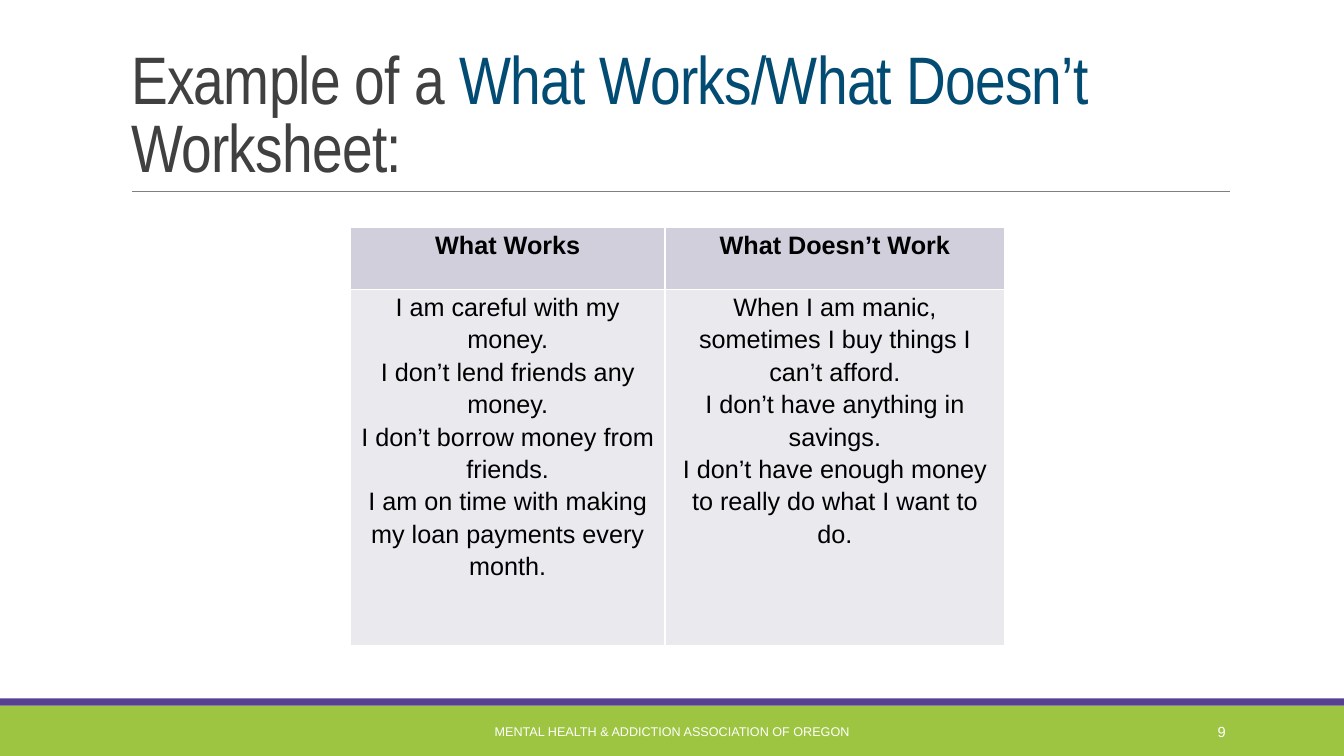
from lxml import etree
from pptx import Presentation
from pptx.dml.color import RGBColor
from pptx.enum import shapes, text
from pptx.oxml import ns
from pptx.util import Cm, Pt

GREEN = RGBColor(0x9D, 0xC5, 0x41)
PURPLE = RGBColor(0x56, 0x41, 0x91)
GRAY = RGBColor(0x80, 0x80, 0x80)
CHARCOAL = RGBColor(0x40, 0x40, 0x40)
NAVY = RGBColor(0x02, 0x4B, 0x73)
HEADER_FILL = RGBColor(0xD1, 0xCF, 0xDC)
BODY_FILL = RGBColor(0xE9, 0xE9, 0xEE)
BLACK = RGBColor(0, 0, 0)
WHITE = RGBColor(255, 255, 255)

TITLE = [("Example of a ", CHARCOAL),
         ("What Works/What Doesn’t", NAVY),
         (" Worksheet:", CHARCOAL)]
WORKSHEET = {
    "What Works": [
        "I am careful with my money.",
        "I don’t lend friends any money.",
        "I don’t borrow money from friends.",
        "I am on time with making my loan payments every month.",
    ],
    "What Doesn’t Work": [
        "When I am manic, sometimes I buy things I can’t afford.",
        "I don’t have anything in savings.",
        "I don’t have enough money to really do what I want to do.",
    ],
}
COLUMN_WIDTHS = [Cm(7.93), Cm(8.56)]
ROW_HEIGHTS = [Cm(1.55), Cm(8.98)]
FOOTER = "MENTAL HEALTH & ADDICTION ASSOCIATION OF OREGON"
PAGE_NUMBER = "9"

CENTER = text.PP_ALIGN.CENTER


def write(frame, paragraphs, font="Arial", size=18, bold=False,
          align=CENTER, spacing=1.0, tracking=None):
    """Fill a text frame; each paragraph is a list of (words, colour) spans."""
    for index, spans in enumerate(paragraphs):
        para = frame.paragraphs[0] if index == 0 else frame.add_paragraph()
        para.alignment = align
        para.line_spacing = spacing
        para.space_before = para.space_after = Pt(0)
        for words, color in spans:
            span = para.add_run()
            span.text = words
            span.font.name = font
            span.font.size = Pt(size)
            span.font.bold = bold
            span.font.color.rgb = color
            if tracking is not None:
                span.font._element.set("spc", str(tracking))


def add_band(page, top, height, color):
    band = page.shapes.add_shape(shapes.MSO_SHAPE.RECTANGLE,
                                 0, top, deck.slide_width, height)
    band.shadow.inherit = False
    band.fill.solid()
    band.fill.fore_color.rgb = color
    band.line.fill.background()


def add_label(page, left, width, words, **style):
    box = page.shapes.add_textbox(left, Cm(17.93), width, Cm(1.02))
    box.text_frame.word_wrap = True
    box.text_frame.vertical_anchor = text.MSO_ANCHOR.MIDDLE
    write(box.text_frame, [[(words, WHITE)]], **style)


def add_borders(cell):
    properties = cell._tc.get_or_add_tcPr()
    for side in ("lnL", "lnR", "lnT", "lnB"):
        line = etree.SubElement(properties, ns.qn(f"a:{side}"), w=str(Pt(1)))
        fill = etree.SubElement(line, ns.qn("a:solidFill"))
        etree.SubElement(fill, ns.qn("a:srgbClr"), val=str(WHITE))


def fill_cell(cell, lines, color, bold):
    add_borders(cell)
    cell.fill.solid()
    cell.fill.fore_color.rgb = color
    cell.margin_left = cell.margin_right = Cm(0.18)
    cell.margin_top = cell.margin_bottom = 0
    write(cell.text_frame, [[(line, BLACK)] for line in lines],
          bold=bold, spacing=1.15)


deck = Presentation()
deck.slide_width, deck.slide_height = Cm(33.87), Cm(19.05)
page = deck.slides.add_slide(deck.slide_layouts[5])

add_band(page, Cm(17.78), Cm(1.27), GREEN)
add_band(page, Cm(17.6), Cm(0.18), PURPLE)

rule = page.shapes.add_connector(shapes.MSO_CONNECTOR.STRAIGHT,
                                 Cm(3.33), Cm(4.82), Cm(31), Cm(4.82))
rule.line.color.rgb = GRAY
rule.line.width = Pt(0.5)
etree.SubElement(rule._element.spPr, ns.qn("a:effectLst"))

title = page.shapes.title
title.left, title.top, title.width, title.height = (
    Cm(3.05), Cm(0.79), Cm(27.94), Cm(4.04))
title.text_frame.word_wrap = True
title.text_frame.auto_size = text.MSO_AUTO_SIZE.NONE
title.text_frame.vertical_anchor = text.MSO_ANCHOR.BOTTOM
write(title.text_frame, [TITLE], font="Arial Narrow", size=48,
      align=text.PP_ALIGN.LEFT, spacing=0.85, tracking=-50)

table = page.shapes.add_table(2, len(WORKSHEET), Cm(8.83), Cm(5.74),
                              sum(COLUMN_WIDTHS), sum(ROW_HEIGHTS)).table
for row, height in zip(table.rows, ROW_HEIGHTS):
    row.height = height
for column, (heading, entries) in enumerate(WORKSHEET.items()):
    table.columns[column].width = COLUMN_WIDTHS[column]
    fill_cell(table.cell(0, column), [heading], HEADER_FILL, bold=True)
    fill_cell(table.cell(1, column), entries, BODY_FILL, bold=False)

add_label(page, Cm(10.24), Cm(13.39), FOOTER, size=9)
add_label(page, Cm(27.51), Cm(3.63), PAGE_NUMBER, size=10.5,
          align=text.PP_ALIGN.RIGHT)

deck.save("out.pptx")
